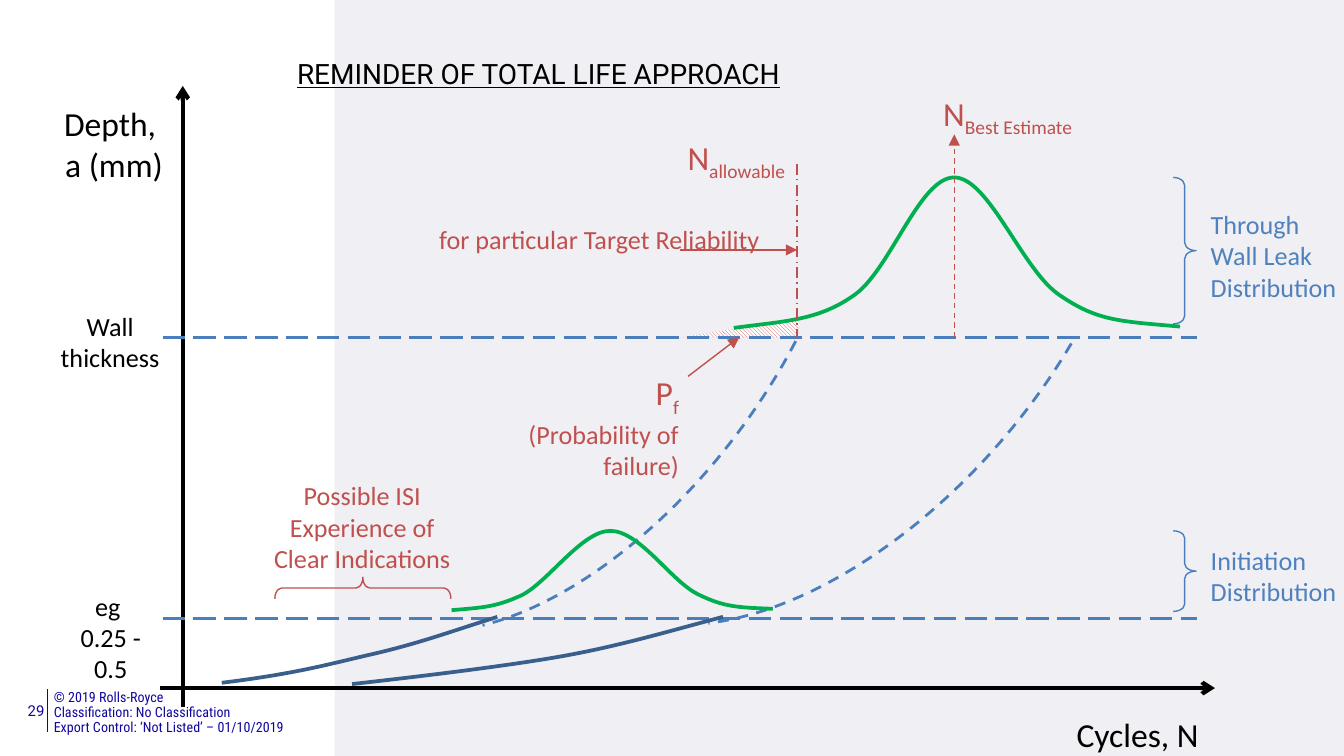
from lxml import etree
from pptx import Presentation
from pptx.dml.color import RGBColor
from pptx.enum import dml, shapes, text
from pptx.oxml.ns import qn
from pptx.util import Inches, Pt

SLIDE_WIDTH = 10
SLIDE_HEIGHT = SLIDE_WIDTH * 9 / 16
BLACK, NAVY, PANEL = "000000", "10069F", "EFEFF4"
RED, GREEN, BLUE, LABEL_BLUE, DARK_BLUE = "C0504D", "00B050", "4B7EBC", "4F81BD", "3A5F8C"
LEFT, CENTER, RIGHT = text.PP_ALIGN.LEFT, text.PP_ALIGN.CENTER, text.PP_ALIGN.RIGHT
DASH, LONG_DASH = dml.MSO_LINE.DASH, dml.MSO_LINE.LONG_DASH
SHAPE = shapes.MSO_SHAPE


def rgb(value):
    return RGBColor.from_string(value)


class LifeDiagram:
    font = "Calibri"

    def __init__(self, slide):
        self.slide = slide
        self.shapes = slide.shapes

    def stroke(self, line, color, width, dash=None, arrow=None):
        line.color.rgb = rgb(color)
        line.width = Pt(width)
        if dash:
            line.dash_style = dash
        if arrow:
            ln = line._get_or_add_ln()
            etree.SubElement(ln, qn("a:tailEnd")).set("type", arrow)

    def shape(self, kind, box, adjustments=(), rotation=0):
        """Add a preset shape with no fill, line or shadow."""
        item = self.shapes.add_shape(kind, *map(Inches, box))
        item.shadow.inherit = False
        item.fill.background()
        item.line.fill.background()
        item.rotation = rotation
        for i, value in enumerate(adjustments):
            item.adjustments[i] = value
        return item

    def outline(self, kind, box, adjustments, color, width, dash=None, rotation=0):
        item = self.shape(kind, box, adjustments, rotation)
        self.stroke(item.line, color, width, dash)

    def line(self, start, end, color, width, dash=None, arrow=None):
        item = self.shapes.add_connector(
            shapes.MSO_CONNECTOR.STRAIGHT, *map(Inches, start + end))
        self.stroke(item.line, color, width, dash, arrow)
        etree.SubElement(item._element.spPr, qn("a:effectLst"))

    def curve(self, points, color):
        """Draw a start point followed by Bezier triples (two controls, one end)."""
        start, *rest = [(Inches(x), Inches(y)) for x, y in points]
        builder = self.shapes.build_freeform(*start)
        builder.add_line_segments(rest, close=False)
        item = builder.convert_to_shape()
        item.shadow.inherit = False
        item.fill.background()
        self.stroke(item.line, color, 2)
        segments = list(item._element.iter(qn("a:lnTo")))
        for i in range(0, len(segments), 3):
            bezier = etree.Element(qn("a:cubicBezTo"))
            segments[i].addprevious(bezier)
            for segment in segments[i:i + 3]:
                bezier.append(segment[0])
                segment.getparent().remove(segment)

    def label(self, box, lines, size, color, align=LEFT, font=None):
        """Add a text box; an underscore in a line starts a subscript."""
        frame = self.shapes.add_textbox(*map(Inches, box)).text_frame
        frame.word_wrap = True
        for i, content in enumerate(lines):
            paragraph = frame.paragraphs[0] if i == 0 else frame.add_paragraph()
            base, _, subscript = content.partition("_")
            paragraph.add_run().text = base
            if subscript:
                run = paragraph.add_run()
                run.text = subscript
                run.font._element.set("baseline", "-25000")
            paragraph.alignment = align
            self.style(paragraph, size, color, font or self.font)
        return frame

    def style(self, paragraph, size, color, font):
        paragraph.font.size = Pt(size)
        paragraph.font.name = font
        paragraph.font.color.rgb = rgb(color)

    def title(self, box, content):
        title = self.shapes.title
        title.left, title.top, title.width, title.height = map(Inches, box)
        frame = title.text_frame
        frame.text = content
        frame.word_wrap = True
        frame.auto_size = text.MSO_AUTO_SIZE.NONE
        frame.vertical_anchor = text.MSO_ANCHOR.TOP
        heading = frame.paragraphs[0]
        heading.alignment = LEFT
        heading.line_spacing = 0.9
        heading.space_before = Pt(0)
        self.style(heading, 15, BLACK, "Roboto")
        heading.font.underline = True
        self.shapes._spTree.append(title._element)  # in front of the panel

    def footer(self):
        self.line((0.35, 5.13), (0.35, 5.45), NAVY, 0.5)
        notice = self.label(
            (0.4, 5.13, 2.22, 0.35),
            ["© 2019 Rolls-Royce", "Classification: No Classification",
             "Export Control: ‘Not Listed’ – 01/10/2019"],
            7.5, NAVY, font="Roboto Condensed")
        notice.margin_left = notice.margin_right = 0
        notice.margin_top = notice.margin_bottom = 0
        notice.vertical_anchor = text.MSO_ANCHOR.MIDDLE
        for paragraph in notice.paragraphs:
            paragraph.line_spacing = 0.9
        self.label((0.05, 5.17, 0.38, 0.24), ["29"], 8, NAVY, RIGHT, "Roboto")


def main():
    prs = Presentation()
    prs.slide_width, prs.slide_height = Inches(SLIDE_WIDTH), Inches(SLIDE_HEIGHT)
    d = LifeDiagram(prs.slides.add_slide(prs.slide_layouts[5]))
    wall, initiation, allowable, best = 2.51, 4.6, 5.93, 7.1

    d.footer()
    panel = d.shape(SHAPE.RECTANGLE, (2.49, 0, 7.51, SLIDE_HEIGHT))
    panel.fill.solid()
    panel.fill.fore_color.rgb = rgb(PANEL)

    failure_area = d.shape(SHAPE.RIGHT_TRIANGLE, (5.06, 2.37, 0.88, 0.14))
    failure_area._element.spPr.xfrm.set("flipH", "1")
    failure_area.fill.patterned()
    failure_area.fill.pattern = dml.MSO_PATTERN.DARK_DOWNWARD_DIAGONAL
    failure_area.fill.fore_color.rgb = rgb(RED)
    failure_area.fill.back_color.rgb = rgb("FFFFFF")

    # Axes and depth levels
    d.line((1.19, 5.12), (9.04, 5.12), BLACK, 2.25, arrow="arrow")
    d.line((1.36, 5.26), (1.36, 0.64), BLACK, 2.25, arrow="arrow")
    for depth in (initiation, wall):
        d.line((1.21, depth), (8.91, depth), BLUE, 1.5, LONG_DASH)
    for box, lines, size in (
            ((7.88, 5.26, 1.17, 0.37), ["Cycles, N"], 18),
            ((0.3, 0.72, 1.04, 0.65), ["Depth,", " a (mm)"], 18),
            ((0.3, 2.26, 1.04, 0.52), ["Wall thickness"], 14),
            ((0.36, 4.34, 0.93, 0.52), ["eg ", "0.25 - 0.5"], 14)):
        d.label(box, lines, size, BLACK, CENTER)

    # Distributions and crack growth
    d.curve([(5.46, 2.44), (5.82, 2.39), (6.08, 2.39), (6.35, 2.2),
             (6.62, 2.02), (6.84, 1.32), (7.1, 1.32),
             (7.36, 1.32), (7.61, 2.02), (7.89, 2.2),
             (8.17, 2.39), (8.33, 2.39), (8.78, 2.43)], GREEN)
    for box, end, rotation in (((1.61, 0.92, 5.43, 2.89), 204.42, 127.1),
                               ((3.38, 0.66, 5.72, 3.18), 204.73, 130.9)):
        d.outline(SHAPE.ARC, box, (143.47, end), BLUE, 1.5, DASH, rotation)
    d.curve([(3.36, 4.54), (3.59, 4.52), (3.68, 4.52), (3.88, 4.43),
             (4.08, 4.33), (4.33, 3.95), (4.54, 3.95),
             (4.76, 3.95), (4.99, 4.32), (5.19, 4.42),
             (5.39, 4.52), (5.5, 4.52), (5.75, 4.53)], GREEN)
    d.curve([(5.38, 4.59), (5, 4.69), (4.64, 4.8), (4.2, 4.88),
             (3.76, 4.96), (2.98, 5.05), (2.62, 5.09)], DARK_BLUE)
    d.curve([(3.7, 4.59), (3.38, 4.69), (3.14, 4.78), (2.8, 4.86),
             (2.45, 4.94), (2.22, 5.01), (1.65, 5.08)], DARK_BLUE)

    # Braces and their labels
    for box, bend, color, rotation in (
            ((8.73, 1.32, 0.17, 1.09), 0.35, BLUE, 0),
            ((8.73, 3.95, 0.17, 0.6), 0.32, BLUE, 0),
            ((2.62, 3.72, 0.16, 1.31), 0.32, RED, 270)):
        d.outline(SHAPE.RIGHT_BRACE, box, (bend, 0.5), color, 0.75, rotation=rotation)
    d.label((8.91, 1.5, 1.19, 0.74), ["Through Wall Leak Distribution"], 14, LABEL_BLUE)
    d.label((8.91, 4, 1.19, 0.52), ["Initiation Distribution"], 14, LABEL_BLUE)
    d.label((1.85, 3.52, 1.69, 0.81), ["Possible ISI Experience of Clear Indications"],
            14, RED, CENTER)

    # Life estimates and probability of failure
    d.line((best, wall), (best, 1), RED, 0.75, DASH, "triangle")
    d.line((allowable, 1.22), (allowable, wall), RED, 0.75, dml.MSO_LINE.LONG_DASH_DOT)
    d.line((5.06, 1.86), (allowable, 1.86), RED, 0.75, arrow="triangle")
    d.line((5.12, 2.8), (5.5, wall), RED, 0.75, arrow="triangle")
    d.label((6.92, 0.64, 1.36, 0.37), ["N_Best Estimate"], 18, RED)
    target = d.label((3.17, 0.97, 2.77, 0.94),
                     ["N_allowable", "for particular Target Reliability"], 18, RED, RIGHT)
    target.paragraphs[1].alignment = LEFT
    target.paragraphs[1].space_before = Pt(22)
    probability = d.label((3.25, 2.72, 1.9, 0.58),
                          ["P_f", "(Probability of failure)"], 18, RED, RIGHT)
    for note in (target, probability):
        note.paragraphs[1].font.size = Pt(14)

    d.title((2.11, 0.4, 4.39, 0.63), "REMINDER OF TOTAL LIFE APPROACH")
    prs.save("out.pptx")


if __name__ == "__main__":
    main()
